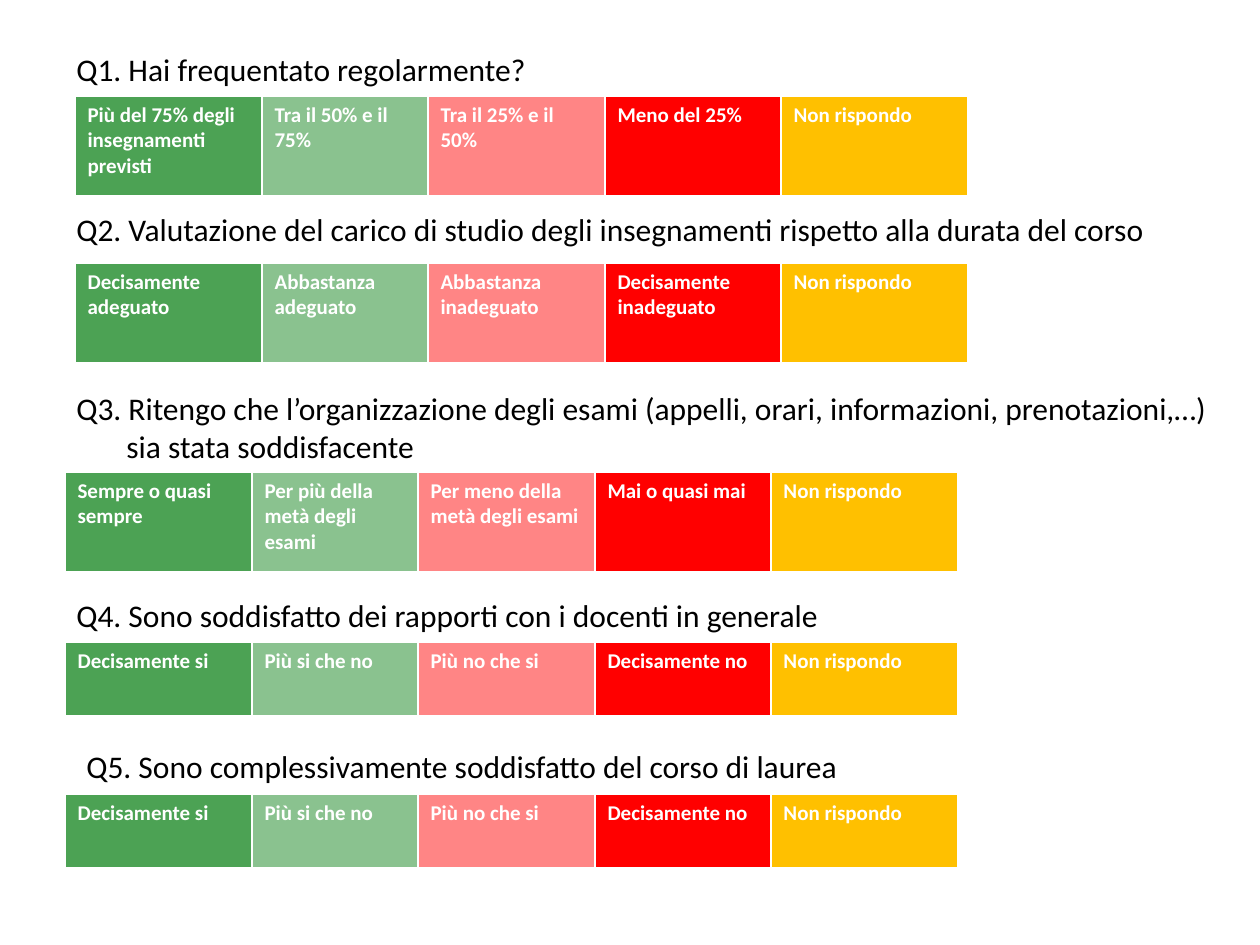
from lxml.etree import SubElement
from pptx import Presentation
from pptx.dml.color import RGBColor
from pptx.enum.text import MSO_AUTO_SIZE as AutoSize
from pptx.oxml.ns import qn
from pptx.util import Emu, Pt

PX_PER_INCH = 126
COL_WIDTHS = [187, 166, 177, 176, 187]
# Fill colour and opacity in percent, from best answer to no answer
SCALE_FILLS = [("4CA254", 100), ("4CA254", 65), ("FF0000", 48),
               ("FF0000", 100), ("FFC000", 100)]
BORDERS = {"lnL": 1, "lnR": 1, "lnT": 1, "lnB": 3}
YES_NO = ["Decisamente si", "Più si che no", "Più no che si", "Decisamente no"]

# Question lines, their left and top and height; answers, table left, top, height
QUESTIONS = [
    (["Q1. Hai frequentato regolarmente?"], (64, 44, 794, 51),
     ["Più del 75% degli insegnamenti previsti", "Tra il 50% e il 75%",
      "Tra il 25% e il 50%", "Meno del 25%"], (75, 96, 101)),
    (["Q2. Valutazione del carico di studio degli insegnamenti rispetto "
      "alla durata del corso"], (64, 204, 1131, 51),
     ["Decisamente adeguato", "Abbastanza adeguato",
      "Abbastanza inadeguato", "Decisamente inadeguato"], (75, 263, 101)),
    (["Q3. Ritengo che l’organizzazione degli esami (appelli, orari, "
      "informazioni, prenotazioni,…)", "sia stata soddisfacente"],
     (64, 383, 1160, 89),
     ["Sempre o quasi sempre", "Per più della metà degli esami",
      "Per meno della metà degli esami", "Mai o quasi mai"], (65, 472, 101)),
    (["Q4. Sono soddisfatto dei rapporti con i docenti in generale"],
     (64, 590, 1131, 51), YES_NO, (65, 642, 75)),
    (["Q5. Sono complessivamente soddisfatto del corso di laurea"],
     (74, 741, 1131, 51), YES_NO, (65, 794, 75)),
]


def px(n):
    return Emu(round(n * 914400 / PX_PER_INCH))


def rgb(color):
    return RGBColor.from_string(color)


def write(p, text, size=18, color="000000", bold=False, indent=0):
    r = p.add_run()
    r.text = text
    r.font.name = "Calibri"
    r.font.size = Pt(size)
    r.font.bold = bold
    r.font.color.rgb = rgb(color)
    if indent:
        pPr = p._p.get_or_add_pPr()
        pPr.set("marL", str(px(indent)))
        pPr.set("indent", "0")


def add_question(s, lines, box):
    tf = s.shapes.add_textbox(*map(px, box)).text_frame
    tf.word_wrap = True
    tf.auto_size = AutoSize.SHAPE_TO_FIT_TEXT
    write(tf.paragraphs[0], lines[0])
    for line in lines[1:]:
        write(tf.add_paragraph(), line, indent=50)


def format_cell(cell, color, opacity):
    tcPr = cell._tc.get_or_add_tcPr()
    # Borders come before the fill in the cell properties
    for tag, width in BORDERS.items():
        ln = SubElement(tcPr, qn(f"a:{tag}"), w=str(Pt(width)))
        SubElement(SubElement(ln, qn("a:solidFill")), qn("a:srgbClr"), val="FFFFFF")
    cell.fill.solid()
    cell.fill.fore_color.rgb = rgb(color)
    if opacity < 100:
        clr = tcPr.find(qn("a:solidFill")).find(qn("a:srgbClr"))
        SubElement(clr, qn("a:alpha"), val=str(opacity * 1000))


def add_answers(s, answers, left, top, height):
    frame = s.shapes.add_table(1, len(COL_WIDTHS), px(left), px(top),
                               px(sum(COL_WIDTHS)), px(height))
    table = frame.table
    for col, width in zip(table.columns, COL_WIDTHS):
        col.width = px(width)
    for cell, text, fill in zip(table.rows[0].cells, answers, SCALE_FILLS):
        format_cell(cell, *fill)
        write(cell.text_frame.paragraphs[0], text, size=12, color="FFFFFF", bold=True)


def main():
    prs = Presentation()
    prs.slide_width, prs.slide_height = px(1260), px(945)
    s = prs.slides.add_slide(prs.slide_layouts[6])

    # Each question sits above its answer scale
    for lines, box, answers, place in QUESTIONS:
        add_question(s, lines, box)
        add_answers(s, answers + ["Non rispondo"], *place)

    prs.save("out.pptx")


if __name__ == "__main__":
    main()
